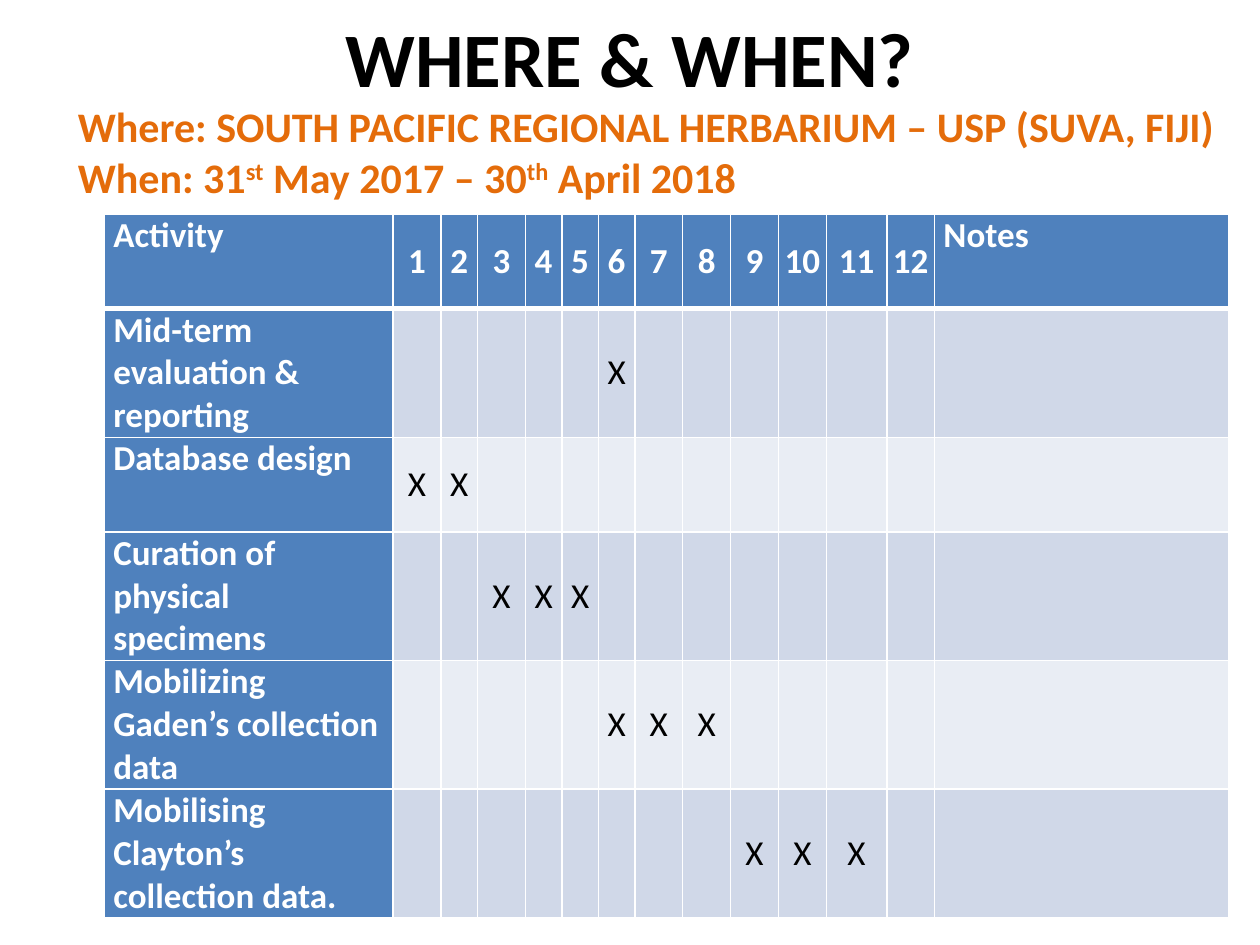
from lxml import etree
from pptx import Presentation
from pptx import util as u
from pptx.dml.color import RGBColor
from pptx.enum import text
from pptx.oxml import ns

PX = 9144
FONT = "Calibri"
WHITE, BLACK, ORANGE, BLUE = "FFFFFF", "000000", "E46C0A", "4F81BD"
BANDS = ["D0D8E8", "E9EDF4"]
COLUMN_WIDTHS = [229, 38, 29, 38, 29, 29, 29, 38, 38, 38, 38, 48, 38, 233]
ROW_HEIGHTS = [75, 102, 75, 102, 102, 102]
MONTHS = range(1, 13)
ACTIVITIES = [
    ("Mid-term evaluation & reporting", [6]),
    ("Database design", [1, 2]),
    ("Curation of physical specimens", [3, 4, 5]),
    ("Mobilizing Gaden’s collection data", [6, 7, 8]),
    ("Mobilising Clayton’s collection data.", [9, 10, 11]),
]
DETAILS = [
    [("Where: SOUTH PACIFIC REGIONAL HERBARIUM – USP (SUVA, FIJI)", False)],
    [("When: 31", False), ("st", True), (" May 2017 – 30", False),
     ("th", True), (" April 2018", False)],
]


def px(length):
    """Turn px into EMU."""
    return u.Emu(length * PX)


def color(value):
    """Turn a hex string into a colour."""
    return RGBColor.from_string(value)


def add_run(paragraph, words, size, shade, bold=True, raised=False):
    """Add one formatted run to a paragraph."""
    run = paragraph.add_run()
    run.text = words
    run.font.name = FONT
    run.font.size = u.Pt(size)
    run.font.bold = bold
    run.font.color.rgb = color(shade)
    if raised:
        run.font._element.set("baseline", "30000")


def set_borders(cell, top, bottom):
    """Draw white cell borders with the given top and bottom widths in points."""
    properties = cell._tc.get_or_add_tcPr()
    sides = {"lnL": 1, "lnR": 1, "lnT": top, "lnB": bottom}
    for position, (side, width) in enumerate(sides.items()):
        line = etree.Element(ns.qn("a:" + side), w=str(u.Pt(width)))
        fill = etree.SubElement(line, ns.qn("a:solidFill"))
        etree.SubElement(fill, ns.qn("a:srgbClr"), val=WHITE)
        properties.insert(position, line)


def fill_cell(cell, words, fill, shade, bold, centred, margin):
    """Colour a cell and write its words."""
    cell.fill.solid()
    cell.fill.fore_color.rgb = color(fill)
    cell.margin_left = cell.margin_right = px(margin)
    cell.margin_top = cell.margin_bottom = 0
    paragraph = cell.text_frame.paragraphs[0]
    if centred:
        cell.vertical_anchor = text.MSO_ANCHOR.MIDDLE
        paragraph.alignment = text.PP_ALIGN.CENTER
    if words:
        add_run(paragraph, words, 20, shade, bold)


def add_title(slide, left, top, width, height):
    """Place the heading in the title placeholder."""
    title = slide.shapes.title
    title.left, title.top, title.width, title.height = map(px, (left, top, width, height))
    title.text_frame.vertical_anchor = text.MSO_ANCHOR.MIDDLE
    paragraph = title.text_frame.paragraphs[0]
    paragraph.alignment = text.PP_ALIGN.CENTER
    add_run(paragraph, "WHERE & WHEN?", 44, BLACK)


def add_details(slide, left, top, width, height):
    """Place the lines that give the venue and the dates."""
    frame = slide.shapes.add_textbox(*map(px, (left, top, width, height))).text_frame
    frame.word_wrap = False
    frame.auto_size = text.MSO_AUTO_SIZE.SHAPE_TO_FIT_TEXT
    for index, pieces in enumerate(DETAILS):
        paragraph = frame.add_paragraph() if index else frame.paragraphs[0]
        for words, raised in pieces:
            add_run(paragraph, words, 24, ORANGE, raised=raised)


def add_schedule(slide, left, top, width, height):
    """Place the table of activities by month."""
    table = slide.shapes.add_table(
        len(ROW_HEIGHTS), len(COLUMN_WIDTHS), *map(px, (left, top, width, height))).table
    for column, size in zip(table.columns, COLUMN_WIDTHS):
        column.width = px(size)
    for row, size in zip(table.rows, ROW_HEIGHTS):
        row.height = px(size)
    rows = [["Activity", *map(str, MONTHS), "Notes"]]
    for activity, active in ACTIVITIES:
        rows.append([activity, *("X" if month in active else "" for month in MONTHS), ""])
    for r, row in enumerate(rows):
        for c, words in enumerate(row):
            cell = table.cell(r, c)
            heading = r == 0 or c == 0
            centred = c in MONTHS
            fill = BLUE if heading else BANDS[(r - 1) % 2]
            margin = 0 if r == 0 and centred else 7
            fill_cell(cell, words, fill, WHITE if heading else BLACK, heading, centred, margin)
            set_borders(cell, 3 if r == 1 else 1, 3 if r == 0 else 1)


def main():
    """Build and save the slide."""
    presentation = Presentation()
    presentation.slide_width, presentation.slide_height = px(1000), px(750)
    slide = presentation.slides.add_slide(presentation.slide_layouts[5])
    add_title(slide, 50, -1, 900, 92)
    add_schedule(slide, 83, 170, sum(COLUMN_WIDTHS), sum(ROW_HEIGHTS))
    add_details(slide, 52, 75, 923, 91)
    presentation.save("out.pptx")


if __name__ == "__main__":
    main()
